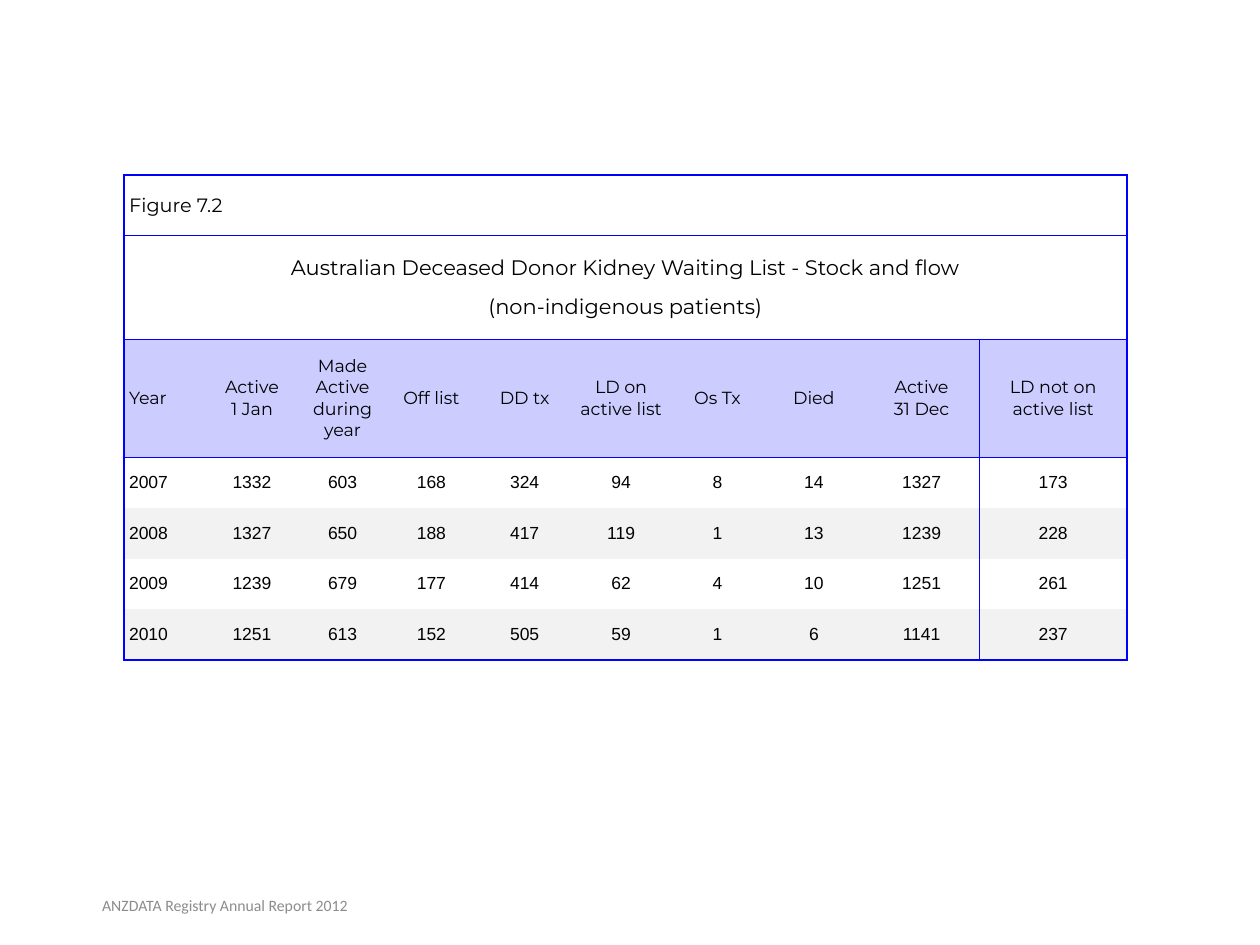
"""Build the kidney waiting list stock and flow table slide."""
from lxml import etree
from pptx import Presentation
from pptx.dml.color import RGBColor
from pptx.enum.text import MSO_ANCHOR as ANCHOR, PP_ALIGN as ALIGN
from pptx.oxml.ns import qn
from pptx.util import Pt

BLACK = RGBColor(0x00, 0x00, 0x00)
BLUE = RGBColor(0x00, 0x00, 0xFF)
LILAC = RGBColor(0xCC, 0xCC, 0xFF)
BAND = RGBColor(0xF2, 0xF2, 0xF2)
WHITE = RGBColor(0xFF, 0xFF, 0xFF)
GREY = RGBColor(0x8C, 0x8C, 0x8C)

COL_WIDTHS = [45.4, 55.4, 48.2, 53.3, 53.3, 56.9, 53.3, 56.9, 66.2, 84.2]
ROW_HEIGHTS = [34.4, 59.4, 67.5, 29.2, 28.7, 28.7, 29.2]
CAPTION = "Figure 7.2"
TITLE = "Australian Deceased Donor Kidney Waiting List - Stock and flow\n(non-indigenous patients)"
HEADERS = ["Year", "Active\n1 Jan", "Made\nActive during year", "Off list", "DD tx",
           "LD on active list", "Os Tx", "Died", "Active\n31 Dec", "LD not on\nactive list"]
DATA = [
    [2007, 1332, 603, 168, 324, 94, 8, 14, 1327, 173],
    [2008, 1327, 650, 188, 417, 119, 1, 13, 1239, 228],
    [2009, 1239, 679, 177, 414, 62, 4, 10, 1251, 261],
    [2010, 1251, 613, 152, 505, 59, 1, 6, 1141, 237],
]
ROWS = [[CAPTION], [TITLE], HEADERS] + DATA
FILLS = [WHITE, WHITE, LILAC, None, BAND, None, BAND]
SIZES = [11, 12, 10, 10, 10, 10, 10]
LAST_ROW, LAST_COL = len(ROWS) - 1, len(COL_WIDTHS) - 1


def set_borders(cell, sides):
    tcPr = cell._tc.get_or_add_tcPr()
    for side in "LRTB":
        ln = etree.SubElement(tcPr, qn(f"a:ln{side}"), w=str(Pt(1)))
        if side in sides:
            fill = etree.SubElement(ln, qn("a:solidFill"))
            etree.SubElement(fill, qn("a:srgbClr"), val=str(BLUE))
        else:
            etree.SubElement(ln, qn("a:noFill"))


def write(tf, text, font, size, color, align):
    tf.text = text
    for p in tf.paragraphs:
        p.alignment = align
        p.font.name = font
        p.font.size = Pt(size)
        p.font.color.rgb = color


prs = Presentation()
prs.slide_width, prs.slide_height = Pt(720), Pt(540)
s = prs.slides.add_slide(prs.slide_layouts[6])

frame = s.shapes.add_table(len(ROWS), len(COL_WIDTHS), Pt(70.9), Pt(100.1),
                           Pt(sum(COL_WIDTHS)), Pt(sum(ROW_HEIGHTS)))
table = frame.table
table.first_row = table.horz_banding = False
for col, width in zip(table.columns, COL_WIDTHS):
    col.width = Pt(width)
for row, height in zip(table.rows, ROW_HEIGHTS):
    row.height = Pt(height)

for r, values in enumerate(ROWS):
    merged = len(values) == 1
    for c in range(LAST_COL + 1):
        cell = table.cell(r, c)
        sides = "T" if r <= 3 else ""
        sides += "B" if r <= 2 or r == LAST_ROW else ""
        sides += "L" if c == 0 or (c == LAST_COL and not merged) else ""
        sides += "R" if c == LAST_COL or (c == 0 if merged else c == LAST_COL - 1) else ""
        set_borders(cell, sides)
        if FILLS[r] is None:
            cell.fill.background()
        else:
            cell.fill.solid()
            cell.fill.fore_color.rgb = FILLS[r]
    if merged:
        table.cell(r, 0).merge(table.cell(r, LAST_COL))
    for c, value in enumerate(values):
        cell = table.cell(r, c)
        is_title = value == TITLE
        cell.vertical_anchor = ANCHOR.MIDDLE
        cell.margin_left = cell.margin_right = Pt(28 if is_title else 2.9)
        cell.margin_top = cell.margin_bottom = Pt(1.4 if is_title else 2.9)
        write(cell.text_frame, str(value), "Montserrat" if r <= 2 else "Arial", SIZES[r],
              BLACK, ALIGN.CENTER if c or is_title else ALIGN.LEFT)

for p in table.cell(1, 0).text_frame.paragraphs[1:]:
    p.space_before = Pt(7.2)

footer = s.shapes.add_textbox(Pt(14.4), Pt(502.6), Pt(228.2), Pt(28.8))
tf = footer.text_frame
tf.word_wrap = True
tf.vertical_anchor = ANCHOR.MIDDLE
write(tf, "ANZDATA Registry Annual Report 2012", "Calibri", 9, GREY, ALIGN.CENTER)

prs.save("out.pptx")
